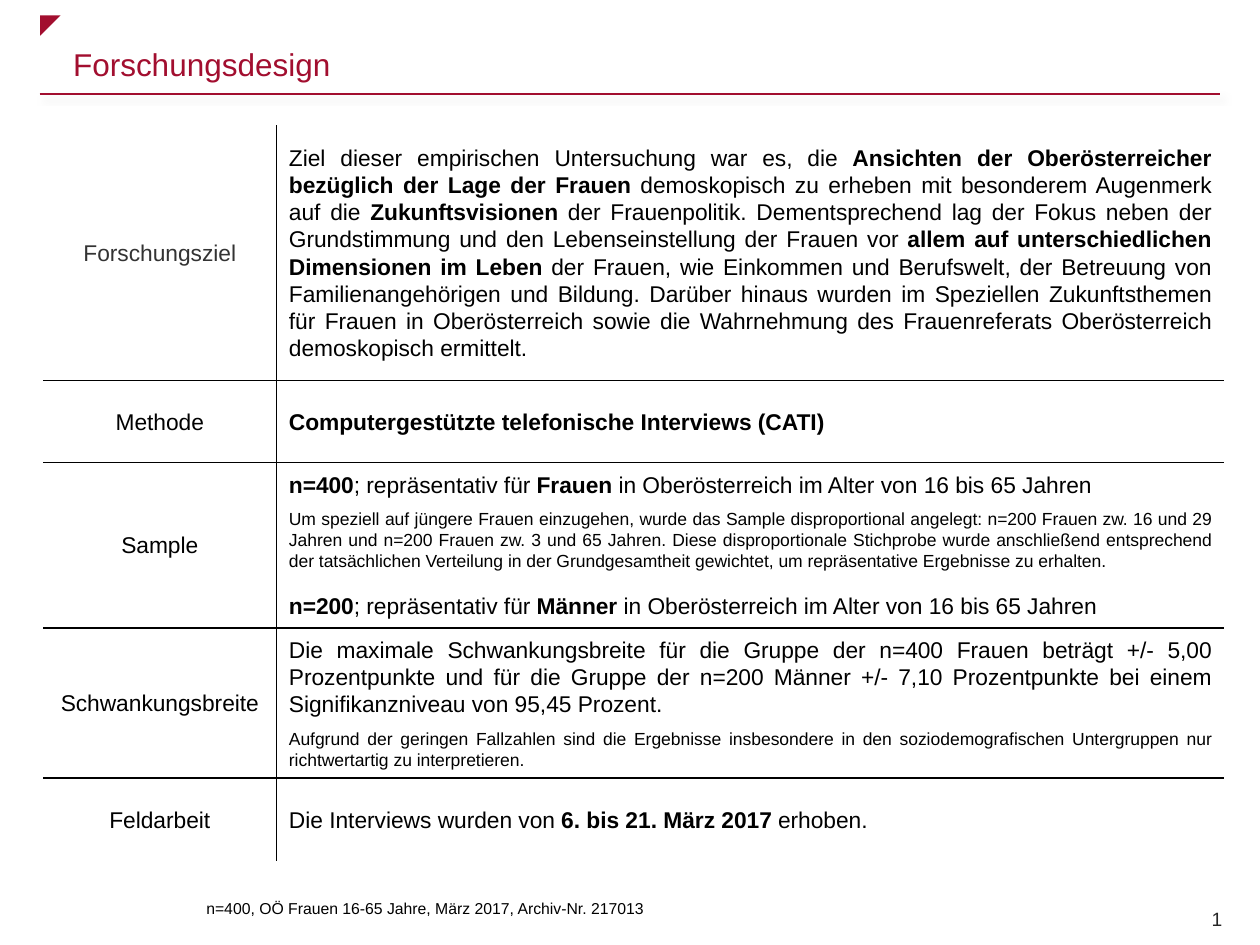
from pptx import Presentation, oxml
from pptx.dml.color import RGBColor
from pptx.enum import shapes, text
from pptx.oxml import ns
from pptx.util import Cm, Pt

COLORS = {"red": "A20E2F", "black": "000000", "label": "333333", "number": "262626"}
FONT = "Arial"
BODY, SMALL = 13, 10
LINE_SPACING = 1.07

TITLE = "Forschungsdesign"
FOOTER = "n=400, OÖ Frauen 16-65 Jahre, März 2017, Archiv-Nr. 217013"
PAGE = "1"

# Rows: label, label colour, height in cm, paragraphs (size, space before, text with **bold**)
ROWS = [
    ("Forschungsziel", "label", 5.15, [
        (BODY, 0, "Ziel dieser empirischen Untersuchung war es, die **Ansichten der "
         "Oberösterreicher bezüglich der Lage der Frauen **demoskopisch zu erheben mit "
         "besonderem Augenmerk auf die **Zukunftsvisionen **der Frauenpolitik. "
         "Dementsprechend lag der Fokus neben der Grundstimmung und den Lebenseinstellung "
         "der Frauen vor **allem auf unterschiedlichen Dimensionen im Leben **der Frauen, "
         "wie Einkommen und Berufswelt, der Betreuung von Familienangehörigen und Bildung. "
         "Darüber hinaus wurden im Speziellen Zukunftsthemen für Frauen in Oberösterreich "
         "sowie die Wahrnehmung des Frauenreferats Oberösterreich demoskopisch ermittelt.")]),
    ("Methode", "black", 1.65, [
        (BODY, 0, "**Computergestützte telefonische Interviews (CATI)**")]),
    ("Sample", "black", 3.34, [
        (BODY, 0, "**n=400**; repräsentativ für **Frauen** in Oberösterreich im Alter "
         "von 16 bis 65 Jahren"),
        (SMALL, 6, "Um speziell auf jüngere Frauen einzugehen, wurde das Sample "
         "disproportional angelegt: n=200 Frauen zw. 16 und 29 Jahren und n=200 Frauen zw. "
         "3 und 65 Jahren. Diese disproportionale Stichprobe wurde anschließend entsprechend "
         "der tatsächlichen Verteilung in der Grundgesamtheit gewichtet, um repräsentative "
         "Ergebnisse zu erhalten."),
        (BODY, 12, "**n=200**; repräsentativ für **Männer** in Oberösterreich im Alter "
         "von 16 bis 65 Jahren")]),
    ("Schwankungsbreite", "black", 3.02, [
        (BODY, 0, "Die maximale Schwankungsbreite für die Gruppe der n=400 Frauen beträgt "
         "+/- 5,00 Prozentpunkte und für die Gruppe der n=200 Männer +/- 7,10 Prozentpunkte "
         "bei einem Signifikanzniveau von 95,45 Prozent."),
        (SMALL, 6, "Aufgrund der geringen Fallzahlen sind die Ergebnisse insbesondere in den "
         "soziodemografischen Untergruppen nur richtwertartig zu interpretieren.")]),
    ("Feldarbeit", "black", 1.68, [
        (BODY, 0, "Die Interviews wurden von **6. bis 21. März 2017 **erhoben.")]),
]
COL_WIDTHS = (4.7, 19.1)


def rgb(name):
    return RGBColor.from_string(COLORS[name])


def style(font, size, color, bold=False):
    font.name, font.size, font.bold = FONT, Pt(size), bold
    font.color.rgb = rgb(color)


def add_label(s, box, content, size, color, align, anchor):
    tf = s.shapes.add_textbox(*map(Cm, box)).text_frame
    tf.word_wrap = True
    tf.vertical_anchor = anchor
    tf.text = content
    tf.paragraphs[0].alignment = align
    style(tf.paragraphs[0].runs[0].font, size, color)
    return tf


def write_paragraph(p, content, size, color, align, before=0):
    p.alignment, p.line_spacing, p.space_before = align, LINE_SPACING, Pt(before)
    for i, part in enumerate(content.split("**")):
        if part:
            r = p.add_run()
            r.text = part
            style(r.font, size, color, bold=i % 2 == 1)


def set_borders(cell, visible):
    tc_pr = cell._tc.get_or_add_tcPr()
    for side in "LRTB":
        paint = (f'<a:solidFill><a:srgbClr val="{COLORS["black"]}"/></a:solidFill>'
                 if side in visible else "<a:noFill/>")
        tc_pr.append(oxml.parse_xml(
            f'<a:ln{side} {ns.nsdecls("a")} w="{Pt(1)}">{paint}</a:ln{side}>'))


prs = Presentation()
prs.slide_width, prs.slide_height = Cm(25.4), Cm(19.05)
s = prs.slides.add_slide(prs.slide_layouts[5])

# Header rule with soft shadow
rule = s.shapes.add_connector(shapes.MSO_CONNECTOR.STRAIGHT,
                              Cm(0.8), Cm(1.9), Cm(24.6), Cm(1.9))
rule.line.color.rgb = rgb("red")
rule.line.width = Pt(1)
rule._element.spPr.append(oxml.parse_xml(
    f'<a:effectLst {ns.nsdecls("a")}><a:outerShdw blurRad="{Pt(4)}" dist="{Pt(3)}" '
    f'dir="2700000"><a:srgbClr val="{COLORS["black"]}"><a:alpha val="25000"/>'
    '</a:srgbClr></a:outerShdw></a:effectLst>'))

# Corner triangle
sp = s.shapes.add_shape(shapes.MSO_SHAPE.RIGHT_TRIANGLE, Cm(0.81), Cm(0.31), Cm(0.41), Cm(0.41))
sp.rotation = 90
sp.shadow.inherit = False
sp.fill.solid()
sp.fill.fore_color.rgb = rgb("red")
sp.line.fill.background()

# Title
title = s.shapes.title
title.left, title.top, title.width, title.height = map(Cm, (1.22, 0.2, 18.7, 1.6))
tf = title.text_frame
tf.text = TITLE
tf.vertical_anchor = text.MSO_ANCHOR.BOTTOM
tf.paragraphs[0].alignment = text.PP_ALIGN.LEFT
style(tf.paragraphs[0].runs[0].font, 18, "red")

# Research design table
table = s.shapes.add_table(len(ROWS), 2, Cm(0.87), Cm(2.52), Cm(sum(COL_WIDTHS)),
                           Cm(sum(row[2] for row in ROWS))).table
table.first_row = table.horz_banding = False
for col, width in zip(table.columns, COL_WIDTHS):
    col.width = Cm(width)
for i, (label, color, height, paragraphs) in enumerate(ROWS):
    table.rows[i].height = Cm(height)
    horizontal = ("T" if i else "") + ("B" if i < len(ROWS) - 1 else "")
    for j, inner in enumerate("RL"):
        cell = table.cell(i, j)
        cell.vertical_anchor = text.MSO_ANCHOR.MIDDLE
        set_borders(cell, horizontal + inner)
        cell.fill.background()
    write_paragraph(table.cell(i, 0).text_frame.paragraphs[0], label, BODY, color,
                    text.PP_ALIGN.CENTER)
    tf = table.cell(i, 1).text_frame
    for k, (size, before, content) in enumerate(paragraphs):
        p = tf.add_paragraph() if k else tf.paragraphs[0]
        write_paragraph(p, content, size, "black", text.PP_ALIGN.JUSTIFY, before)

# Footer and page number
add_label(s, (3.91, 18, 19.6, 0.64), FOOTER, 9, "black",
          text.PP_ALIGN.LEFT, text.MSO_ANCHOR.TOP)
number = add_label(s, (23.29, 17.53, 1.6, 1.22), PAGE, 11, "number",
                   text.PP_ALIGN.RIGHT, text.MSO_ANCHOR.BOTTOM)
number.margin_bottom = 0

prs.save("out.pptx")
